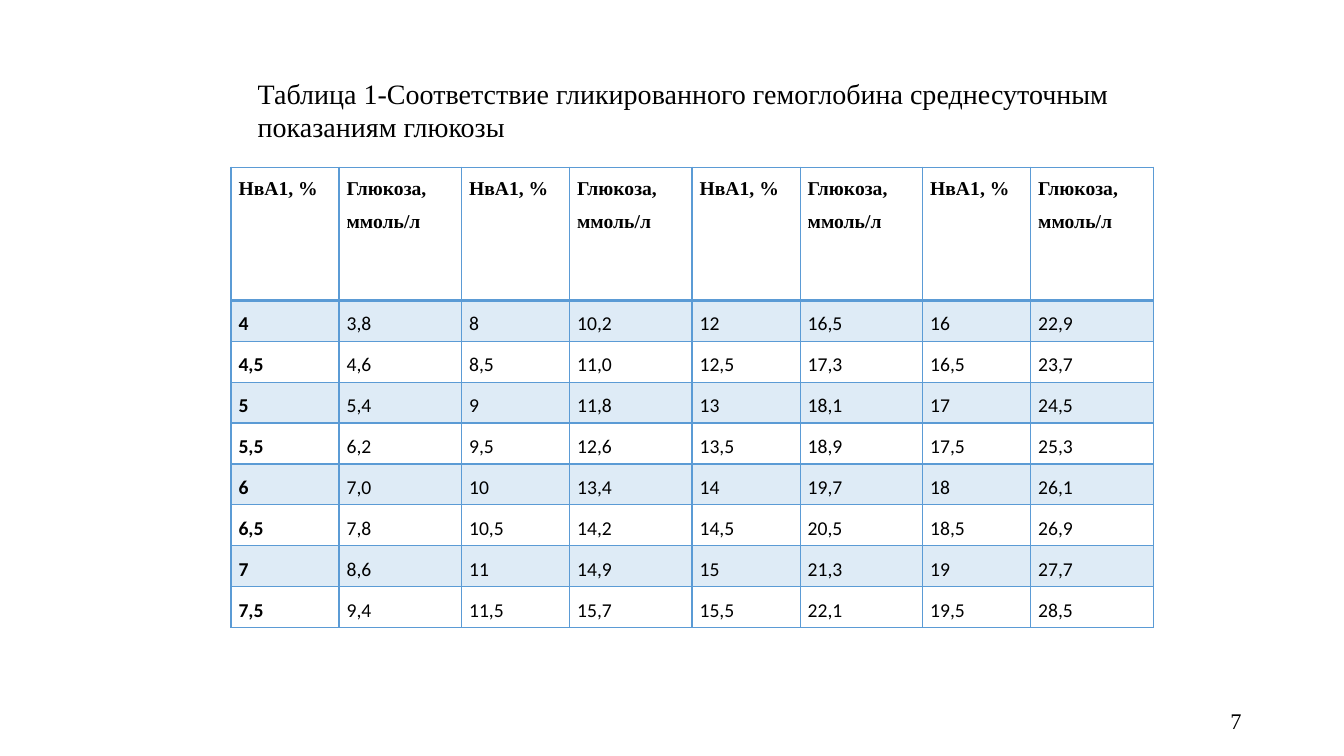
from dataclasses import dataclass

import lxml.etree
import pptx
import pptx.dml.color
import pptx.enum.text
import pptx.oxml.ns
import pptx.util

Pt = pptx.util.Pt
qn = pptx.oxml.ns.qn
ALIGN = pptx.enum.text.PP_ALIGN
ANCHOR = pptx.enum.text.MSO_ANCHOR

BLACK, BLUE = "000000", "5B9BD5"
SERIF, SANS = "Times New Roman", "Calibri"
HEADS = ("НвА1, %", "Глюкоза, ммоль/л")
COL_WIDTHS = (77.2, 87.5)
HEAD_HEIGHT, ROW_HEIGHT = 95, 29.25
BAND_ALPHA = 20

# Glucose readings, one list per pair of columns; HbA1 rises by 0.5 from 4
GLUCOSE = (
    ("3,8", "4,6", "5,4", "6,2", "7,0", "7,8", "8,6", "9,4"),
    ("10,2", "11,0", "11,8", "12,6", "13,4", "14,2", "14,9", "15,7"),
    ("16,5", "17,3", "18,1", "18,9", "19,7", "20,5", "21,3", "22,1"),
    ("22,9", "23,7", "24,5", "25,3", "26,1", "26,9", "27,7", "28,5"),
)


@dataclass
class Label:
    text: str
    left: float
    top: float
    width: float
    height: float
    size: float
    align: ALIGN = ALIGN.LEFT
    anchor: ANCHOR = ANCHOR.TOP


LABELS = (
    Label("Таблица 1-Соответствие гликированного гемоглобина среднесуточным "
          "показаниям глюкозы", 177, 51, 644.4, 55.5, 20),
    Label("7", 678, 500.5, 216, 28.8, 16, ALIGN.RIGHT, ANCHOR.MIDDLE),
)


def rgb(color: str) -> pptx.dml.color.RGBColor:
    return pptx.dml.color.RGBColor.from_string(color)


def add_run(p, text: str, size: float, font: str, bold: bool = False) -> None:
    r = p.add_run()
    r.text = text
    r.font.size = Pt(size)
    r.font.name = font
    r.font.bold = bold
    r.font.color.rgb = rgb(BLACK)


def add_label(slide, label: Label) -> None:
    sp = slide.shapes.add_textbox(Pt(label.left), Pt(label.top),
                                  Pt(label.width), Pt(label.height))
    tf = sp.text_frame
    tf.word_wrap = True
    tf.vertical_anchor = label.anchor
    p = tf.paragraphs[0]
    p.alignment = label.align
    add_run(p, label.text, label.size, SERIF)


def set_border(cell, side: str, width: float) -> None:
    tc_pr = cell._tc.get_or_add_tcPr()
    ln = lxml.etree.SubElement(tc_pr, qn(f"a:ln{side}"), w=str(Pt(width)))
    fill = lxml.etree.SubElement(ln, qn("a:solidFill"))
    lxml.etree.SubElement(fill, qn("a:srgbClr"), val=BLUE)


def set_band(cell) -> None:
    cell.fill.solid()
    cell.fill.fore_color.rgb = rgb(BLUE)
    clr = cell._tc.tcPr.find(qn("a:solidFill")).find(qn("a:srgbClr"))
    lxml.etree.SubElement(clr, qn("a:alpha"), val=str(BAND_ALPHA * 1000))


def fill_cell(cell, text: str, row: int, col: int) -> None:
    cell.margin_left = cell.margin_right = Pt(5.4)
    cell.margin_top = cell.margin_bottom = Pt(0)
    p = cell.text_frame.paragraphs[0]
    p.alignment = ALIGN.JUSTIFY
    p.line_spacing = 1.5
    add_run(p, text, 14, SANS if row else SERIF, row == 0 or col == 0)

    # Double-weight rule under the header row
    set_border(cell, "L", 1)
    set_border(cell, "R", 1)
    set_border(cell, "T", 2 if row == 1 else 1)
    set_border(cell, "B", 2 if row == 0 else 1)
    if row % 2:
        set_band(cell)
    else:
        cell.fill.background()


def table_rows() -> list[list[str]]:
    count = len(GLUCOSE[0])
    rows = [list(HEADS) * len(GLUCOSE)]
    for i in range(count):
        row = []
        for block, readings in enumerate(GLUCOSE):
            hba1 = 4 + (block * count + i) / 2
            row += [f"{hba1:g}".replace(".", ","), readings[i]]
        rows.append(row)
    return rows


def add_glucose_table(slide) -> None:
    rows = table_rows()
    widths = COL_WIDTHS * len(GLUCOSE)
    height = HEAD_HEIGHT + ROW_HEIGHT * (len(rows) - 1)
    table = slide.shapes.add_table(len(rows), len(widths), Pt(165), Pt(119.5),
                                   Pt(sum(widths)), Pt(height)).table
    table.horz_banding = False
    table.first_row = False
    for column, width in zip(table.columns, widths):
        column.width = Pt(width)
    for i, row in enumerate(rows):
        table.rows[i].height = Pt(ROW_HEIGHT if i else HEAD_HEIGHT)
        for j, text in enumerate(row):
            fill_cell(table.cell(i, j), text, i, j)


def main() -> None:
    prs = pptx.Presentation()
    prs.slide_width, prs.slide_height = Pt(960), Pt(540)
    slide = prs.slides.add_slide(prs.slide_layouts[6])
    add_glucose_table(slide)
    # Title and page number
    for label in LABELS:
        add_label(slide, label)
    prs.save("out.pptx")


if __name__ == "__main__":
    main()
